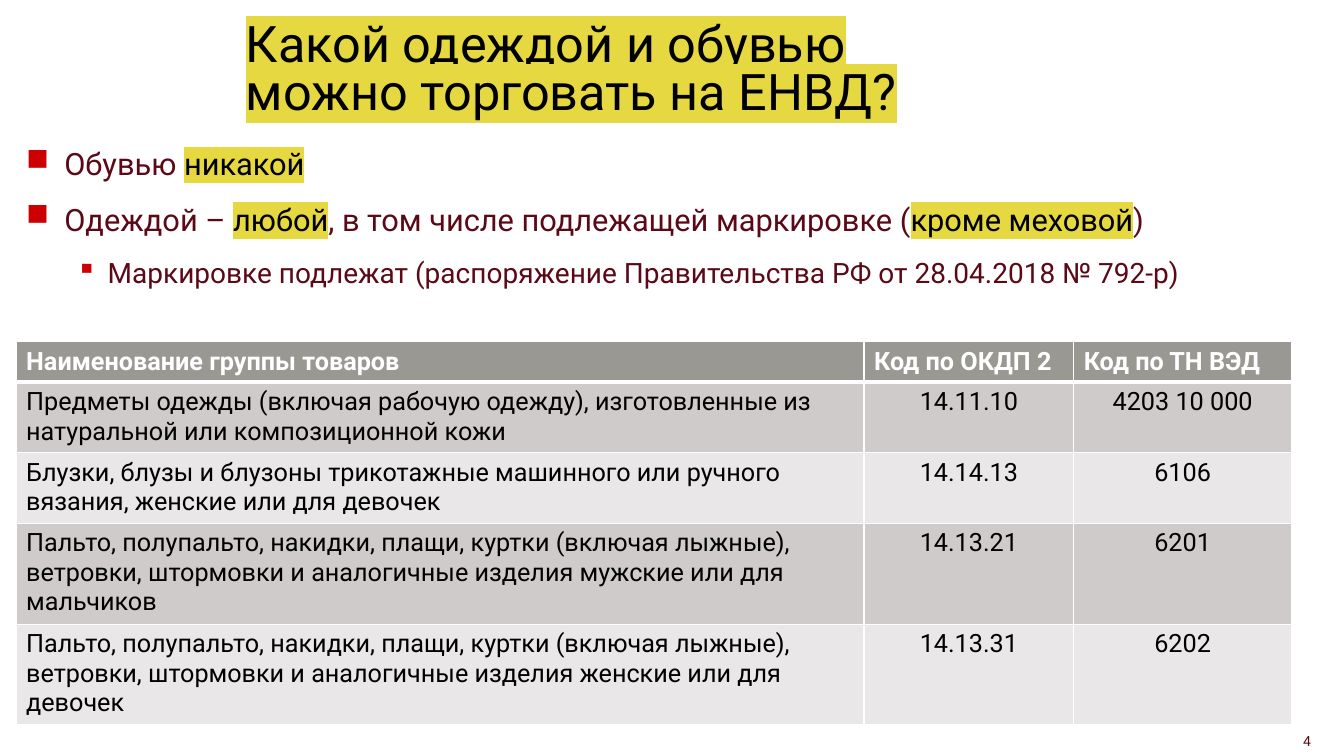
from lxml import etree
from pptx import Presentation
from pptx.dml.color import RGBColor
from pptx.enum.text import MSO_ANCHOR, PP_ALIGN
from pptx.oxml.ns import qn
from pptx.util import Inches, Pt

LEFT, MID, RIGHT = PP_ALIGN.LEFT, PP_ALIGN.CENTER, PP_ALIGN.RIGHT
TOP, CENTER = MSO_ANCHOR.TOP, MSO_ANCHOR.MIDDLE

FONT = "Roboto"
BLACK = RGBColor(0x00, 0x00, 0x00)
WHITE = RGBColor(0xFF, 0xFF, 0xFF)
WINE = RGBColor(0x5B, 0x09, 0x17)
RED = RGBColor(0xCC, 0x00, 0x00)
YELLOW = RGBColor(0xE5, 0xD8, 0x41)
GRAY = RGBColor(0x99, 0x98, 0x93)
BANDS = (RGBColor(0xD0, 0xCB, 0xCB), RGBColor(0xE9, 0xE7, 0xE7))

# Content: (text, marked) pieces
TITLE = [("Какой одеждой и обувью можно торговать на ЕНВД?", True)]
# level, pieces
POINTS = [
    (0, [("Обувью ", False), ("никакой", True)]),
    (0, [("Одеждой – ", False), ("любой", True),
         (", в том числе подлежащей маркировке (", False),
         ("кроме меховой", True), (")", False)]),
    (1, [("Маркировке подлежат (распоряжение Правительства РФ "
          "от 28.04.2018 № 792-р)", False)]),
]
# bullet, margin, hanging indent, size
LEVELS = [("■", 0.38, 0.38, 22), ("▪", 0.81, 0.31, 20)]
NUMBER = [("4", False)]

COLS = [8.41, 2.08, 2.16]
ROWS = [0.4, 0.7, 0.7, 1, 1]
GOODS = [
    ("Наименование группы товаров", "Код по ОКДП 2", "Код по ТН ВЭД"),
    ("Предметы одежды (включая рабочую одежду), изготовленные из "
     "натуральной или композиционной кожи", "14.11.10", "4203 10 000"),
    ("Блузки, блузы и блузоны трикотажные машинного или ручного "
     "вязания, женские или для девочек", "14.14.13", "6106"),
    ("Пальто, полупальто, накидки, плащи, куртки (включая лыжные), "
     "ветровки, штормовки и аналогичные изделия мужские или для "
     "мальчиков", "14.13.21", "6201"),
    ("Пальто, полупальто, накидки, плащи, куртки (включая лыжные), "
     "ветровки, штормовки и аналогичные изделия женские или для "
     "девочек", "14.13.31", "6202"),
]

deck = Presentation()
deck.slide_width, deck.slide_height = Inches(13.33), Inches(7.5)
slide = deck.slides.add_slide(deck.slide_layouts[6])


def add_box(x, y, w, h, anchor=TOP):
    box = slide.shapes.add_textbox(Inches(x), Inches(y), Inches(w), Inches(h))
    frame = box.text_frame
    frame.word_wrap = True
    frame.vertical_anchor = anchor
    return frame


def style(run, size, color, bold=False):
    font = run.font
    font.name, font.size, font.bold = FONT, Pt(size), bold
    font.color.rgb = color


def write(para, pieces, size):
    for text, marked in pieces:
        run = para.add_run()
        run.text = text
        style(run, size, BLACK if marked else WINE)
        if marked:
            mark = etree.Element(qn("a:highlight"))
            etree.SubElement(mark, qn("a:srgbClr"), val=str(YELLOW))
            run.font._element.find(qn("a:solidFill")).addnext(mark)


def set_bullet(para, sign, margin, hang):
    props = para._p.get_or_add_pPr()
    props.set("marL", str(Inches(margin)))
    props.set("indent", str(-Inches(hang)))
    tint = etree.SubElement(props, qn("a:buClr"))
    etree.SubElement(tint, qn("a:srgbClr"), val=str(RED))
    etree.SubElement(props, qn("a:buChar"), char=sign)


def set_edges(cell, top, bottom):
    props = cell._tc.get_or_add_tcPr()
    edges = [("L", 1), ("R", 1), ("T", top), ("B", bottom)]
    for i, (side, width) in enumerate(edges):
        line = etree.Element(qn("a:ln" + side), w=str(Pt(width)))
        fill = etree.SubElement(line, qn("a:solidFill"))
        etree.SubElement(fill, qn("a:srgbClr"), val=str(WHITE))
        props.insert(i, line)


# Title
head = add_box(2.34, 0.28, 7.06, 0.87, CENTER).paragraphs[0]
head.line_spacing = 0.8
write(head, TITLE, 36)

# Bullet points
body = add_box(0.16, 1.39, 13.02, 1.7)
for i, (level, pieces) in enumerate(POINTS):
    para = body.add_paragraph() if i else body.paragraphs[0]
    sign, margin, hang, size = LEVELS[level]
    para.level = level
    if i:
        para.space_before = Pt(13)
    set_bullet(para, sign, margin, hang)
    write(para, pieces, size)

# Table of goods
table = slide.shapes.add_table(
    len(ROWS), len(COLS), Inches(0.16), Inches(3.39),
    Inches(sum(COLS)), Inches(sum(ROWS))).table
for c, width in enumerate(COLS):
    table.columns[c].width = Inches(width)
for r, height in enumerate(ROWS):
    table.rows[r].height = Inches(height)
    for c, text in enumerate(GOODS[r]):
        cell = table.cell(r, c)
        cell.fill.solid()
        cell.fill.fore_color.rgb = BANDS[(r - 1) % 2] if r else GRAY
        set_edges(cell, 3 if r == 1 else 1, 1 if r else 3)
        para = cell.text_frame.paragraphs[0]
        para.text = text
        para.alignment = MID if r and c else LEFT
        style(para.runs[0], 18, BLACK if r else WHITE, r == 0)

# Slide number
foot = add_box(12.26, 7.22, 0.84, 0.28).paragraphs[0]
foot.alignment = RIGHT
write(foot, NUMBER, 10)

deck.save("out.pptx")
